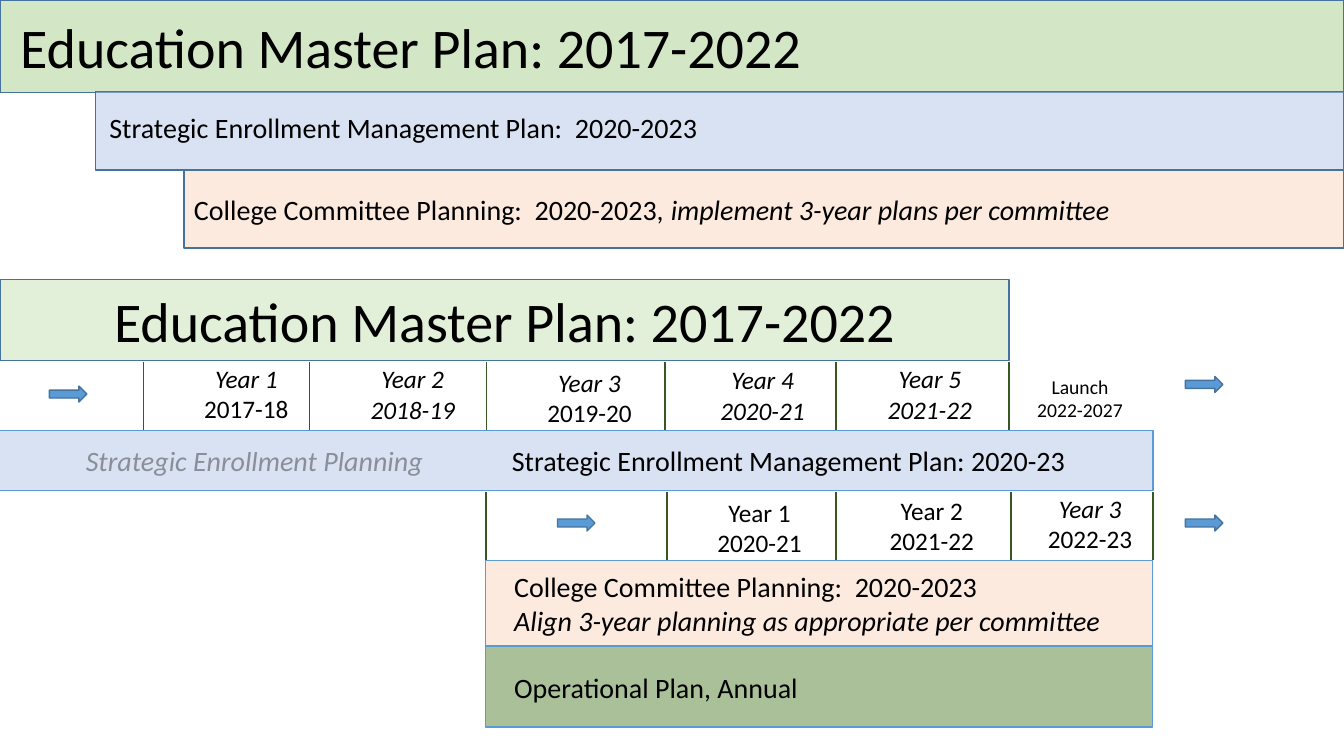
from lxml import etree
from pptx import Presentation
from pptx.dml.color import RGBColor
from pptx.enum.shapes import MSO_CONNECTOR, MSO_SHAPE
from pptx.enum.text import MSO_ANCHOR, MSO_AUTO_SIZE, PP_ALIGN
from pptx.oxml.ns import qn
from pptx.util import Pt

RECTANGLE, RIGHT_ARROW = MSO_SHAPE.RECTANGLE, MSO_SHAPE.RIGHT_ARROW
STRAIGHT = MSO_CONNECTOR.STRAIGHT
TOP, MIDDLE = MSO_ANCHOR.TOP, MSO_ANCHOR.MIDDLE
LEFT, CENTER = PP_ALIGN.LEFT, PP_ALIGN.CENTER
NO_AUTOFIT = MSO_AUTO_SIZE.NONE

FONT = "Calibri"
COLORS = {
    "text": "000000", "green": "A9D18E", "pale green": "E2F0D9",
    "dark green": "548235", "blue": "B4C7E7", "peach": "F8CBAD",
    "divider": "385723", "arrow": "5B9BD5",
    "dark edge": "43739E", "light edge": "5B9BD5",
}
WIDTH, HEIGHT = 960, 540

# Content: a paragraph is a list of (text, italic, opacity) runs
PLAN = "Education Master Plan: 2017-2022"
ENROLLMENT = "Strategic Enrollment Management Plan:  2020-2023"
COMMITTEE = "College Committee Planning:  2020-2023"
TAB_STOP = 304.3

# left, top, width, height, fill, opacity, edge, text format, paragraphs
BARS = [
    (0, 0, WIDTH, 66, "green", 50, "dark edge", {}, []),
    (68.2, 65.6, 891.8, 56, "blue", 50, "dark edge", {}, []),
    (131.5, 121.3, 828.5, 55.8, "peach", 39, "dark edge", {},
     [[(COMMITTEE + ", ", False, 100),
       ("implement 3-year plans per committee", True, 100)]]),
    (0, 199.6, 720.7, 57.8, "pale green", 100, "dark edge",
     {"size": 40, "alignment": CENTER}, [[(PLAN, False, 100)]]),
    (-0.7, 307.5, 824.4, 43, "blue", 50, "light edge", {"inset": 62, "tab": TAB_STOP},
     [[("Strategic Enrollment Planning", True, 37),
       ("\tStrategic Enrollment Management Plan: 2020-23", False, 100)]]),
    (347, 400.2, 476.5, 61.4, "peach", 39, "light edge", {"inset": 20.3},
     [[(COMMITTEE, False, 100)],
      [("Align 3-year planning as appropriate per committee", True, 100)]]),
    (347, 462, 476.5, 57.5, "dark green", 50, "light edge", {"inset": 20.3},
     [[("Operational Plan, Annual", False, 100)]]),
]

# left, top, year number, school year, number italic, school year italic
YEARS = [
    (138.2, 255.6, 1, "2017-18", True, False),
    (257, 256.3, 2, "2018-19", True, True),
    (383.3, 258.5, 3, "2019-20", True, False),
    (506.9, 257, 4, "2020-21", True, True),
    (626.4, 256.3, 5, "2021-22", True, True),
    (504.7, 351.4, 1, "2020-21", False, False),
    (627.8, 350, 2, "2021-22", False, False),
    (740.9, 348.5, 3, "2022-23", True, False),
]
YEAR_WIDTH, YEAR_HEIGHT = 75.6, 51.1

# Divider rows: top -> left positions
DIVIDERS = {
    258.5: [102.6, 221, 347.6, 475.2, 597, 720.9],
    351.5: [347, 476.6, 597.2, 722, 823.7],
}
DIVIDER_LENGTH = 48.8
ARROWS = [(35.3, 275.8), (846.7, 268.9), (398.2, 367.9), (846.7, 367.9)]
ARROW_WIDTH, ARROW_HEIGHT = 26.8, 11.4


def color(name):
    return RGBColor.from_string(COLORS[name])


def set_opacity(properties, percent):
    """Give the solid fill inside the properties element an alpha value."""
    if percent < 100:
        rgb = properties.find(qn("a:solidFill")).find(qn("a:srgbClr"))
        etree.SubElement(rgb, qn("a:alpha"), val=str(percent * 1000))


def write(shape, paragraphs, size=20, alignment=LEFT, anchor=MIDDLE,
          wrap=True, inset=7.2, tab=None):
    frame = shape.text_frame
    frame_format = {
        "auto_size": NO_AUTOFIT, "word_wrap": wrap, "vertical_anchor": anchor,
        "margin_left": Pt(inset), "margin_right": Pt(7.2),
        "margin_top": Pt(3.6), "margin_bottom": Pt(3.6),
    }
    for name, value in frame_format.items():
        setattr(frame, name, value)
    for index, runs in enumerate(paragraphs):
        paragraph = frame.add_paragraph() if index else frame.paragraphs[0]
        paragraph.alignment = alignment
        if tab:
            properties = paragraph._p.get_or_add_pPr()
            tabs = etree.SubElement(properties, qn("a:tabLst"))
            etree.SubElement(tabs, qn("a:tab"), pos=str(Pt(tab)), algn="l")
        for text, italic, opacity in runs:
            run = paragraph.add_run()
            run.text = text
            run_format = {"name": FONT, "size": Pt(size), "italic": italic}
            for name, value in run_format.items():
                setattr(run.font, name, value)
            run.font.color.rgb = color("text")
            set_opacity(run._r.get_or_add_rPr(), opacity)


def add_block(slide, kind, box, fill, opacity, edge):
    shape = slide.shapes.add_shape(kind, *map(Pt, box))
    shape.shadow.inherit = False
    shape.fill.solid()
    shape.fill.fore_color.rgb = color(fill)
    set_opacity(shape._element.spPr, opacity)
    shape.line.color.rgb = color(edge)
    shape.line.width = Pt(1)
    return shape


def add_label(slide, box, paragraphs, **text_format):
    label = slide.shapes.add_textbox(*map(Pt, box))
    write(label, paragraphs, anchor=TOP, **text_format)


def add_divider(slide, left, top):
    line = slide.shapes.add_connector(
        STRAIGHT, Pt(left), Pt(top), Pt(left), Pt(top + DIVIDER_LENGTH))
    line.line.color.rgb = color("divider")
    line.line.width = Pt(1.25)
    etree.SubElement(line._element.spPr, qn("a:effectLst"))


def main():
    presentation = Presentation()
    presentation.slide_width, presentation.slide_height = Pt(WIDTH), Pt(HEIGHT)
    slide = presentation.slides.add_slide(presentation.slide_layouts[5])

    # Plan bars
    for *box, fill, opacity, edge, text_format, paragraphs in BARS:
        bar = add_block(slide, RECTANGLE, box, fill, opacity, edge)
        if paragraphs:
            write(bar, paragraphs, **text_format)

    # Title, brought in front of its bar
    title = slide.shapes.title
    title.left, title.top, title.width, title.height = map(Pt, (7.2, 5, 578, 55.4))
    write(title, [[(PLAN, False, 100)]], size=40, anchor=TOP, wrap=False)
    title._element.getparent().append(title._element)

    # Labels
    add_label(slide, (71, 75.6, 726.5, 31.7), [[(ENROLLMENT, False, 100)]])
    for left, top, number, school_year, number_italic, year_italic in YEARS:
        add_label(slide, (left, top, YEAR_WIDTH, YEAR_HEIGHT),
                  [[(f"Year {number}", number_italic, 100)],
                   [(school_year, year_italic, 100)]],
                  size=18, alignment=CENTER, wrap=False)
    add_label(slide, (720, 264.2, 103, 41),
              [[("Launch", False, 100)], [("2022-2027", False, 100)]],
              size=14, alignment=CENTER)

    # Timeline dividers and arrows
    for top, positions in DIVIDERS.items():
        for left in positions:
            add_divider(slide, left, top)
    for left, top in ARROWS:
        add_block(slide, RIGHT_ARROW, (left, top, ARROW_WIDTH, ARROW_HEIGHT),
                  "arrow", 100, "dark edge")

    presentation.save("out.pptx")


if __name__ == "__main__":
    main()
